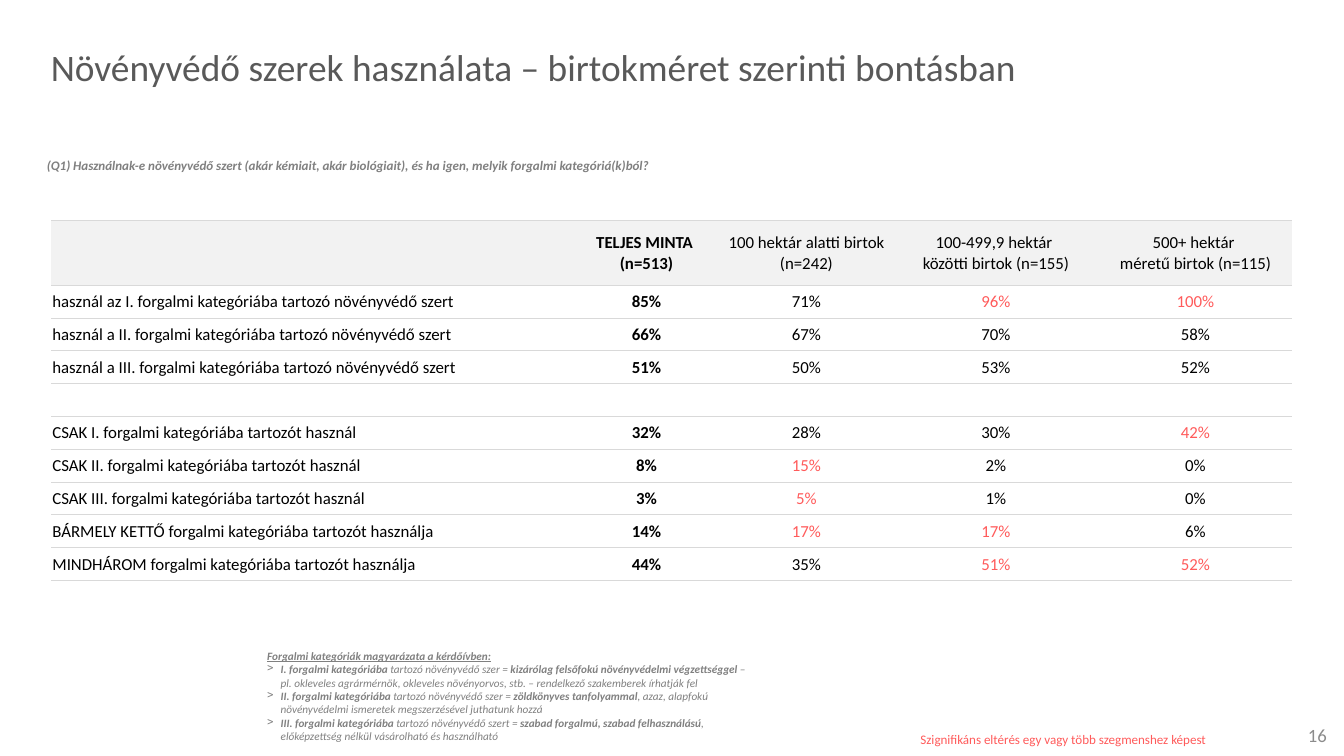
from lxml.etree import SubElement
from pptx import Presentation
from pptx.dml.color import RGBColor
from pptx.enum.text import MSO_ANCHOR as ANCHOR, PP_ALIGN as ALIGN
from pptx.oxml.ns import qn
from pptx.util import Inches, Pt

FONT = "Calibri"
BLACK, RED, GREY = "000000", "FF5B5B", "808080"
HEADER_FILL, RULE = "F2F2F2", "D9D9D9"
SLIDE_WIDTH = 10
SLIDE_HEIGHT = SLIDE_WIDTH * 9 / 16

TITLE = "Növényvédő szerek használata – birtokméret szerinti bontásban"
QUESTION = ("(Q1) Használnak-e növényvédő szert (akár kémiait, akár biológiait), "
            "és ha igen, melyik forgalmi kategóriá(k)ból?")
LEGEND = "Szignifikáns eltérés egy vagy több szegmenshez képest"
PAGE = "16"

NOTE_HEAD = "Forgalmi kategóriák magyarázata a kérdőívben:"
# Pieces alternate bold and regular.
NOTES = [
    ("I. forgalmi kategóriába", " tartozó növényvédő szer = ",
     "kizárólag felsőfokú növényvédelmi végzettséggel",
     " – pl. okleveles agrármérnök, okleveles növényorvos, stb. – rendelkező szakemberek írhatják fel"),
    ("II. forgalmi kategóriába", " tartozó növényvédő szer = ",
     "zöldkönyves tanfolyammal",
     ", azaz, alapfokú növényvédelmi ismeretek megszerzésével juthatunk hozzá"),
    ("III. forgalmi kategóriába", " tartozó növényvédő szert = ",
     "szabad forgalmú, szabad felhasználású",
     ", előképzettség nélkül vásárolható és használható"),
]

HEADER = ["", "TELJES MINTA \n(n=513)", "100 hektár alatti birtok (n=242)",
          "100-499,9 hektár \nközötti birtok (n=155)", "500+ hektár \nméretű birtok (n=115)"]
# A negative share marks a significant difference.
ROWS = [
    ("használ az I. forgalmi kategóriába tartozó növényvédő szert", 85, 71, -96, -100),
    ("használ a II. forgalmi kategóriába tartozó növényvédő szert", 66, 67, 70, 58),
    ("használ a III. forgalmi kategóriába tartozó növényvédő szert", 51, 50, 53, 52),
    ("", "", "", "", ""),
    ("CSAK I. forgalmi kategóriába tartozót használ", 32, 28, 30, -42),
    ("CSAK II. forgalmi kategóriába tartozót használ", 8, -15, 2, 0),
    ("CSAK III. forgalmi kategóriába tartozót használ", 3, -5, 1, 0),
    ("BÁRMELY KETTŐ forgalmi kategóriába tartozót használja", 14, -17, -17, 6),
    ("MINDHÁROM forgalmi kategóriába tartozót használja", 44, 35, -51, -52),
]
COL_WIDTHS = [3.88, 1.1, 1.28, 1.54, 1.43]
TABLE_LEFT, TABLE_TOP, TABLE_HEIGHT, HEADER_HEIGHT = 0.38, 1.64, 2.68, 0.48
NO_STYLE = "{2D5ABB26-0587-4C30-8999-92F81FD0307C}"


def rgb(color):
    return RGBColor.from_string(color)


def add_run(p, text, size=9, color=BLACK, bold=False, italic=False, underline=False):
    r = p.add_run()
    r.text = text
    f = r.font
    f.name, f.size, f.color.rgb = FONT, Pt(size), rgb(color)
    f.bold, f.italic, f.underline = bold, italic, underline


def write(tf, text, align=ALIGN.LEFT, **fmt):
    """Fill a text frame, one paragraph for each line."""
    for i, line in enumerate(text.split("\n")):
        p = tf.add_paragraph() if i else tf.paragraphs[0]
        p.alignment = align
        add_run(p, line, **fmt)


def add_text(slide, box, text, anchor=ANCHOR.TOP, **fmt):
    tf = slide.shapes.add_textbox(*map(Inches, box)).text_frame
    tf.word_wrap = True
    tf.vertical_anchor = anchor
    write(tf, text, **fmt)
    return tf


def add_note(tf, pieces, indent=0.1):
    p = tf.add_paragraph()
    pPr = p._p.get_or_add_pPr()
    pPr.set("marL", str(Inches(indent)))
    pPr.set("indent", str(-Inches(indent)))
    SubElement(pPr, qn("a:buChar"), char=">")
    for i, piece in enumerate(pieces):
        add_run(p, piece, size=6, color=GREY, bold=i % 2 == 0, italic=True)


def rule_cell(cell):
    """Draw the thin lines above and below a cell."""
    for side in ("a:lnT", "a:lnB"):
        ln = SubElement(cell._tc.get_or_add_tcPr(), qn(side), w=str(Pt(0.25)))
        SubElement(SubElement(ln, qn("a:solidFill")), qn("a:srgbClr"), val=RULE)


def fill_cell(cell, value, row, col):
    cell.margin_left = cell.margin_right = cell.margin_top = Inches(0.01)
    cell.margin_bottom = 0
    cell.vertical_anchor = ANCHOR.MIDDLE
    rule_cell(cell)
    if row == 0:
        cell.fill.solid()
        cell.fill.fore_color.rgb = rgb(HEADER_FILL)
    else:
        cell.fill.background()
    if value == "":
        p = cell.text_frame.paragraphs[0]
        SubElement(p._p, qn("a:endParaRPr"), sz=str(900))
        return
    is_share = isinstance(value, int)
    write(cell.text_frame, f"{abs(value)}%" if is_share else value,
          align=ALIGN.CENTER if col else ALIGN.LEFT, bold=col == 1,
          color=RED if is_share and value < 0 else BLACK)


def add_usage_table(slide):
    data = [HEADER, *ROWS]
    table = slide.shapes.add_table(
        len(data), len(COL_WIDTHS), Inches(TABLE_LEFT), Inches(TABLE_TOP),
        Inches(sum(COL_WIDTHS)), Inches(TABLE_HEIGHT)).table
    table.horz_banding = table.first_row = False
    table._tbl.tblPr.find(qn("a:tableStyleId")).text = NO_STYLE
    for column, width in zip(table.columns, COL_WIDTHS):
        column.width = Inches(width)
    row_height = (TABLE_HEIGHT - HEADER_HEIGHT) / len(ROWS)
    for i, values in enumerate(data):
        table.rows[i].height = Inches(row_height if i else HEADER_HEIGHT)
        for j, value in enumerate(values):
            fill_cell(table.cell(i, j), value, i, j)


def main():
    prs = Presentation()
    prs.slide_width, prs.slide_height = Inches(SLIDE_WIDTH), Inches(SLIDE_HEIGHT)
    s = prs.slides.add_slide(prs.slide_layouts[6])
    add_text(s, (9.45, 5.32, 0.52, 0.3), PAGE, anchor=ANCHOR.MIDDLE,
             align=ALIGN.RIGHT, size=10, color="8C8C8C")
    add_text(s, (0.28, 0.16, 8.86, 0.67), TITLE, anchor=ANCHOR.MIDDLE,
             size=20, color="595959")
    add_text(s, (0.25, 1.12, 4.88, 0.22), QUESTION, size=7, color=GREY,
             bold=True, italic=True)
    notes = add_text(s, (1.89, 4.78, 3.77, 0.81), NOTE_HEAD, size=6, color=GREY,
                     bold=True, italic=True, underline=True)
    for pieces in NOTES:
        add_note(notes, pieces)
    add_usage_table(s)
    add_text(s, (6.75, 5.39, 2.42, 0.22), LEGEND, size=7, color=RED)
    prs.save("out.pptx")


if __name__ == "__main__":
    main()
